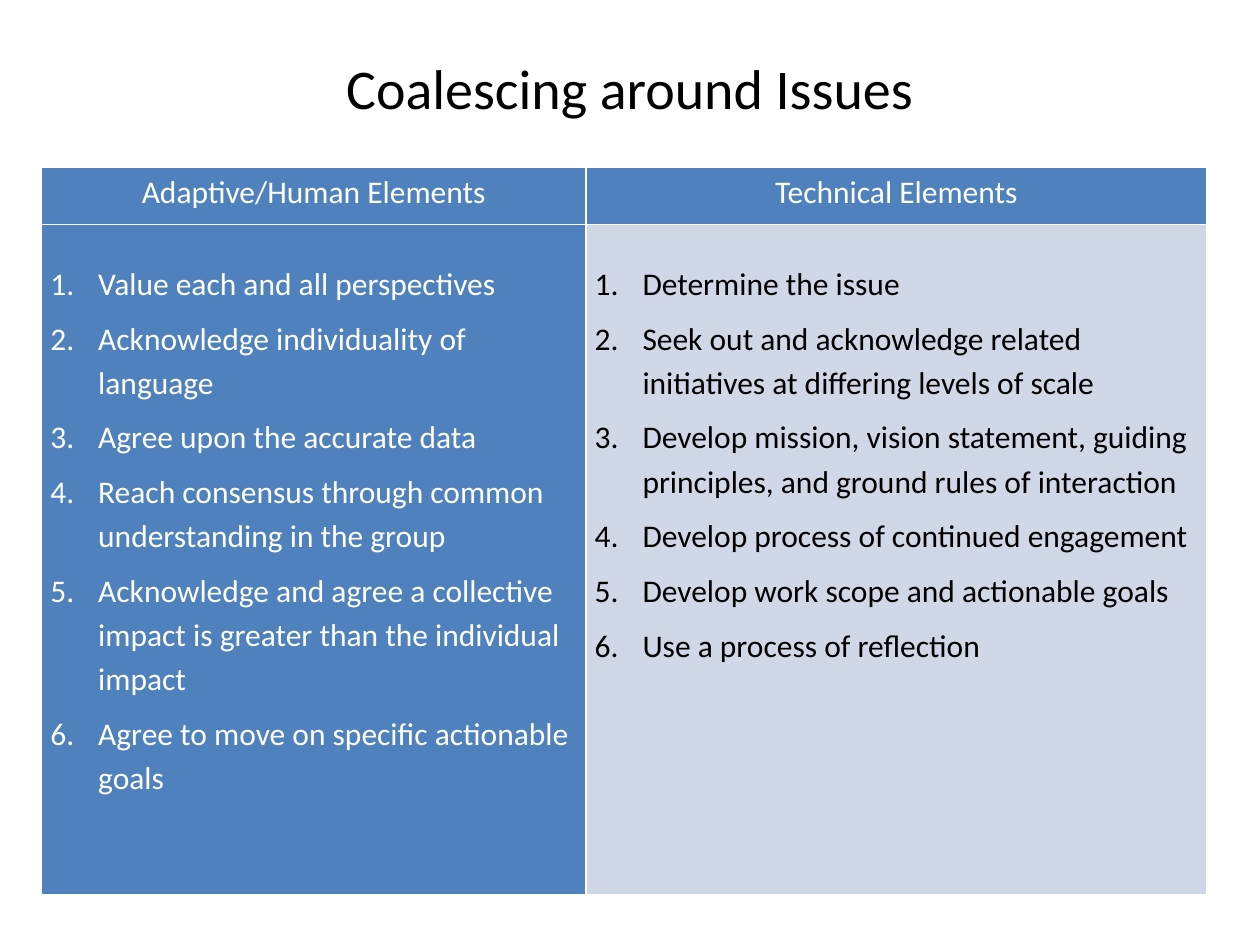
from dataclasses import dataclass

from lxml.etree import SubElement
from pptx import Presentation
from pptx.dml.color import RGBColor
from pptx.enum.text import MSO_ANCHOR, PP_ALIGN
from pptx.oxml.ns import qn
from pptx.util import Inches, Pt

TITLE = "Coalescing around Issues"
COLUMNS = [
    ("Adaptive/Human Elements", [
        "Value each and all perspectives",
        "Acknowledge individuality of language",
        "Agree upon the accurate data",
        "Reach consensus through common understanding in the group",
        "Acknowledge and agree a collective impact is greater than the "
        "individual impact",
        "Agree to move on specific actionable goals",
    ]),
    ("Technical Elements", [
        "Determine the issue",
        "Seek out and acknowledge related initiatives at differing levels of scale",
        "Develop mission, vision statement, guiding principles, and ground "
        "rules of interaction",
        "Develop process of continued engagement",
        "Develop work scope and actionable goals",
        "Use a process of reflection",
    ]),
]


@dataclass(frozen=True)
class Theme:
    font: str = "Calibri"
    title: int = 32
    text: int = 18
    black: str = "000000"
    white: str = "FFFFFF"
    blue: str = "4F81BD"
    pale: str = "D0D8E8"


THEME = Theme()
WIDTHS = (4.32, 4.93)
HEIGHTS = (0.45, 5.32)
SIDE, TOP, INDENT = 0.07, 0.28, 0.38


def style(para, size, color):
    for run in para.runs:
        run.font.name = THEME.font
        run.font.size = Pt(size)
        run.font.color.rgb = RGBColor.from_string(color)


def number(para):
    """Give the paragraph an automatic number and a hanging indent."""
    props = para._p.get_or_add_pPr()
    props.set("marL", str(Inches(INDENT)))
    props.set("indent", str(-Inches(INDENT)))
    SubElement(props, qn("a:buFont"), typeface="+mj-lt")
    SubElement(props, qn("a:buAutoNum"), type="arabicPeriod")


def border(cell):
    props = cell._tc.get_or_add_tcPr()
    for side in "LRTB":
        line = SubElement(props, qn(f"a:ln{side}"), w=str(Pt(1)))
        fill = SubElement(line, qn("a:solidFill"))
        SubElement(fill, qn("a:srgbClr"), val=THEME.white)


def fill_cell(cell, lines, back, color, listed):
    border(cell)
    cell.fill.solid()
    cell.fill.fore_color.rgb = RGBColor.from_string(back)
    cell.margin_left = cell.margin_right = Inches(SIDE)
    cell.margin_top = Inches(TOP if listed else 0)
    cell.margin_bottom = 0
    cell.vertical_anchor = MSO_ANCHOR.TOP
    cell.text_frame.text = "\n".join(lines)
    for para in cell.text_frame.paragraphs:
        para.line_spacing = 1.15
        para.alignment = PP_ALIGN.LEFT if listed else PP_ALIGN.CENTER
        if listed:
            para.space_after = Pt(6)
            number(para)
        style(para, THEME.text, color)


def add_title(slide):
    box = slide.shapes.add_textbox(
        Inches(0.5), Inches(0.3), Inches(9), Inches(0.78))
    frame = box.text_frame
    frame.word_wrap = True
    frame.vertical_anchor = MSO_ANCHOR.MIDDLE
    frame.text = TITLE
    para = frame.paragraphs[0]
    para.alignment = PP_ALIGN.CENTER
    style(para, THEME.title, THEME.black)


def add_grid(slide):
    table = slide.shapes.add_table(
        len(HEIGHTS), len(WIDTHS), Inches(0.33), Inches(1.33),
        Inches(sum(WIDTHS)), Inches(sum(HEIGHTS))).table
    for row, height in zip(table.rows, HEIGHTS):
        row.height = Inches(height)
    for col, width in zip(table.columns, WIDTHS):
        col.width = Inches(width)
    looks = [(THEME.blue, THEME.white), (THEME.pale, THEME.black)]
    for col, ((head, items), look) in enumerate(zip(COLUMNS, looks)):
        fill_cell(table.cell(0, col), [head], *looks[0], listed=False)
        fill_cell(table.cell(1, col), items, *look, listed=True)


def main():
    deck = Presentation()
    deck.slide_width, deck.slide_height = Inches(10), Inches(7.5)
    slide = deck.slides.add_slide(deck.slide_layouts[6])
    add_title(slide)
    add_grid(slide)
    deck.save("out.pptx")


if __name__ == "__main__":
    main()
